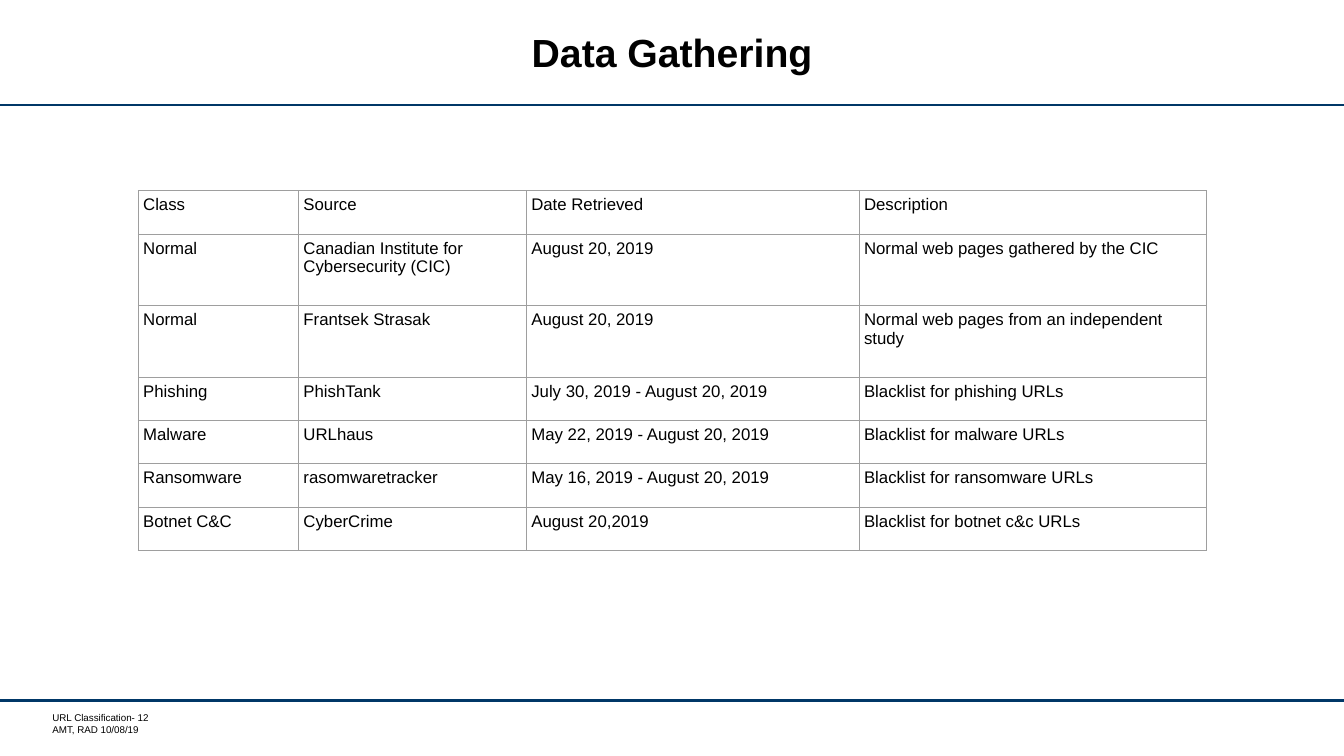
"""Build the Data Gathering slide with its table of URL sources."""
from typing import NamedTuple

from lxml import etree
from pptx import Presentation
from pptx import util as u
from pptx.dml import color
from pptx.enum import shapes, text
from pptx.oxml import ns

COLORS = {"text": "000000", "rule": "003767", "border": "9E9E9E"}
FONT = "Arial"
SLIDE_WIDTH, SLIDE_HEIGHT = 13.33, 7.5
RULE_TOPS = (1.04, 6.95)
TABLE_LEFT, TABLE_TOP = 1.37, 1.89
COLUMN_WIDTHS = (1.59, 2.26, 3.3, 3.44)
SHORT_ROW, TALL_ROW = 0.43, 0.71
CELL_MARGIN = 0.05


class Source(NamedTuple):
    category: str
    provider: str
    retrieved: str
    description: str
    height: float = SHORT_ROW


class TextArea(NamedTuple):
    left: float
    top: float
    width: float
    height: float


SOURCES = (
    Source("Class", "Source", "Date Retrieved", "Description"),
    Source("Normal", "Canadian Institute for Cybersecurity (CIC)", "August 20, 2019",
           "Normal web pages gathered by the CIC", TALL_ROW),
    Source("Normal", "Frantsek Strasak", "August 20, 2019",
           "Normal web pages from an independent study", TALL_ROW),
    Source("Phishing", "PhishTank", "July 30, 2019 - August 20, 2019",
           "Blacklist for phishing URLs"),
    Source("Malware", "URLhaus", "May 22, 2019 - August 20, 2019",
           "Blacklist for malware URLs"),
    Source("Ransomware", "rasomwaretracker", "May 16, 2019 - August 20, 2019",
           "Blacklist for ransomware URLs"),
    Source("Botnet C&C", "CyberCrime", "August 20,2019",
           "Blacklist for botnet c&c URLs"),
)


def write(frame, content: str, *, size: float, bold: bool = False,
          align=text.PP_ALIGN.LEFT, spacing=None) -> None:
    frame.word_wrap = True
    frame.text = content
    for paragraph in frame.paragraphs:
        paragraph.alignment = align
        paragraph.line_spacing = spacing
        paragraph.font.name = FONT
        paragraph.font.size = u.Pt(size)
        paragraph.font.bold = bold
        paragraph.font.color.rgb = color.RGBColor.from_string(COLORS["text"])


def add_text_area(slide, area: TextArea, content: str, *, left_margin: float = 0,
                  anchor=text.MSO_ANCHOR.TOP, **text_format) -> None:
    frame = slide.shapes.add_textbox(*map(u.Inches, area)).text_frame
    frame.margin_left = u.Inches(left_margin)
    frame.margin_right = frame.margin_top = frame.margin_bottom = 0
    frame.vertical_anchor = anchor
    write(frame, content, **text_format)


def add_rule(slide, top: float) -> None:
    rule = slide.shapes.add_connector(
        shapes.MSO_CONNECTOR.STRAIGHT,
        u.Inches(0), u.Inches(top), u.Inches(SLIDE_WIDTH), u.Inches(top))
    rule.line.color.rgb = color.RGBColor.from_string(COLORS["rule"])
    rule.line.width = u.Pt(1.75)
    etree.SubElement(rule._element.spPr, ns.qn("a:effectLst"))


def add_borders(cell) -> None:
    properties = cell._tc.get_or_add_tcPr()
    for position, side in enumerate(("lnL", "lnR", "lnT", "lnB")):
        border = etree.Element(ns.qn(f"a:{side}"), w=str(u.Pt(0.38)))
        fill = etree.SubElement(border, ns.qn("a:solidFill"))
        etree.SubElement(fill, ns.qn("a:srgbClr"), val=COLORS["border"])
        properties.insert(position, border)


def add_source_table(slide) -> None:
    table = slide.shapes.add_table(
        len(SOURCES), len(COLUMN_WIDTHS), u.Inches(TABLE_LEFT), u.Inches(TABLE_TOP),
        u.Inches(sum(COLUMN_WIDTHS)),
        u.Inches(sum(source.height for source in SOURCES))).table
    table.first_row = table.horz_banding = False
    for column, width in zip(table.columns, COLUMN_WIDTHS):
        column.width = u.Inches(width)
    for row, source in zip(table.rows, SOURCES):
        row.height = u.Inches(source.height)
        for cell, content in zip(row.cells, source[:-1]):
            cell.margin_left = cell.margin_right = u.Inches(CELL_MARGIN)
            cell.margin_top = cell.margin_bottom = u.Inches(CELL_MARGIN)
            cell.fill.background()
            add_borders(cell)
            write(cell.text_frame, content, size=12)


def main() -> None:
    deck = Presentation()
    deck.slide_width = u.Inches(SLIDE_WIDTH)
    deck.slide_height = u.Inches(SLIDE_HEIGHT)
    slide = deck.slides.add_slide(deck.slide_layouts[6])
    for top in RULE_TOPS:
        add_rule(slide, top)
    add_text_area(slide, TextArea(0.47, 7.06, 1.59, 0.24),
                  "URL Classification- 12\nAMT, RAD 10/08/19",
                  left_margin=0.05, size=7)
    add_text_area(slide, TextArea(1.37, 0.11, 10.59, 0.89), "Data Gathering",
                  anchor=text.MSO_ANCHOR.MIDDLE, size=28, bold=True,
                  align=text.PP_ALIGN.CENTER, spacing=u.Pt(28))
    add_source_table(slide)
    deck.save("out.pptx")


if __name__ == "__main__":
    main()
